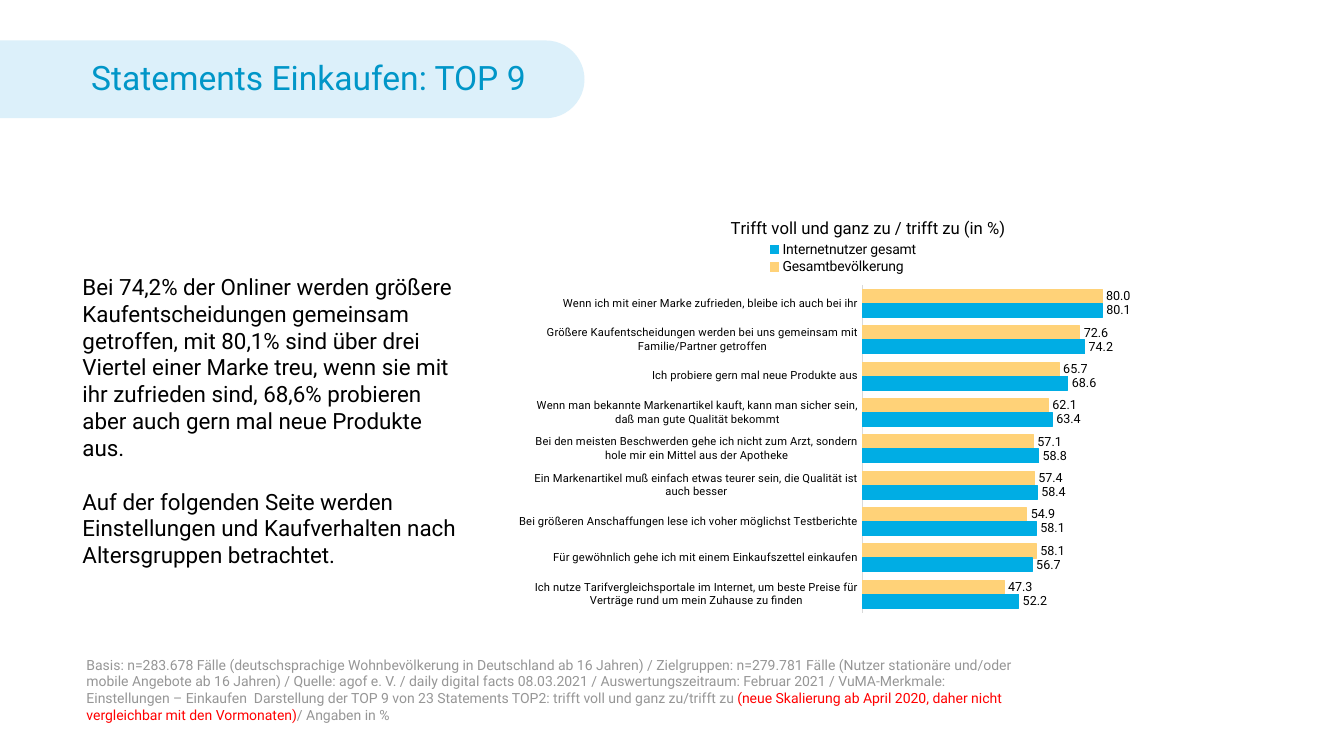
from lxml import etree
from pptx import Presentation
from pptx.chart.data import CategoryChartData
from pptx.dml.color import RGBColor
from pptx.enum.chart import XL_CHART_TYPE as ChartType
from pptx.enum.chart import XL_LABEL_POSITION as LabelPosition
from pptx.enum.chart import XL_LEGEND_POSITION as LegendPosition
from pptx.enum.chart import XL_TICK_MARK as TickMark
from pptx.enum.shapes import MSO_SHAPE as Shape
from pptx.enum.text import MSO_ANCHOR as Anchor
from pptx.enum.text import PP_ALIGN as Align
from pptx.oxml.ns import qn
from pptx.util import Cm, Pt

BLACK = RGBColor(0x00, 0x00, 0x00)
GREY = RGBColor(0x96, 0x96, 0x96)
RED = RGBColor(0xFF, 0x00, 0x00)
BLUE = RGBColor(0x00, 0x96, 0xC8)
PALE_BLUE = RGBColor(0xDC, 0xF0, 0xFA)
AXIS_GREY = RGBColor(0xD9, 0xD9, 0xD9)
YELLOW = RGBColor(0xFF, 0xD2, 0x78)
CYAN = RGBColor(0x00, 0xAD, 0xE4)

STATEMENTS = [
    # statement, Gesamtbevölkerung, Internetnutzer gesamt
    ("Wenn ich mit einer Marke zufrieden, bleibe ich auch bei ihr", 80.0, 80.1),
    ("Größere Kaufentscheidungen werden bei uns gemeinsam mit Familie/Partner getroffen", 72.6, 74.2),
    ("Ich probiere gern mal neue Produkte aus", 65.7, 68.6),
    ("Wenn man bekannte Markenartikel kauft, kann man sicher sein, daß man gute Qualität bekommt", 62.1, 63.4),
    ("Bei den meisten Beschwerden gehe ich nicht zum Arzt, sondern hole mir ein Mittel aus der Apotheke", 57.1, 58.8),
    ("Ein Markenartikel muß einfach etwas teurer sein, die Qualität ist auch besser", 57.4, 58.4),
    ("Bei größeren Anschaffungen lese ich voher möglichst Testberichte", 54.9, 58.1),
    ("Für gewöhnlich gehe ich mit einem Einkaufszettel einkaufen", 58.1, 56.7),
    ("Ich nutze Tarifvergleichsportale im Internet, um beste Preise für Verträge rund um mein Zuhause zu finden", 47.3, 52.2),
]


class PageBuilder:
    def __init__(self, page, font_name="Roboto"):
        self.page = page
        self.font_name = font_name

    def style(self, font, size, color):
        font.name = self.font_name
        font.size = Pt(size)
        font.bold = False
        font.color.rgb = color

    def heading(self, text, left, top, width, height):
        pill = self.page.shapes.add_shape(
            Shape.ROUNDED_RECTANGLE, Cm(left), Cm(top), Cm(width), Cm(height))
        pill.adjustments[0] = 0.5
        pill.shadow.inherit = False
        pill.fill.solid()
        pill.fill.fore_color.rgb = PALE_BLUE
        pill.line.fill.background()
        frame = pill.text_frame
        frame.text = text
        frame.vertical_anchor = Anchor.MIDDLE
        frame.margin_right = Cm(1.19)
        para = frame.paragraphs[0]
        para.alignment = Align.RIGHT
        para.line_spacing = 0.9
        self.style(para.runs[0].font, 24, BLUE)

    def text(self, paragraphs, left, top, width, height, size, anchor=Anchor.TOP, gap=0):
        """Each paragraph is a list of (text, colour) spans."""
        box = self.page.shapes.add_textbox(Cm(left), Cm(top), Cm(width), Cm(height))
        frame = box.text_frame
        frame.word_wrap = True
        frame.vertical_anchor = anchor
        for index, spans in enumerate(paragraphs):
            para = frame.add_paragraph() if index else frame.paragraphs[0]
            if index:
                para.space_before = Pt(gap)
            for words, color in spans:
                span = para.add_run()
                span.text = words
                self.style(span.font, size, color)

    def place(self, element, index, **fractions):
        """Give a chart part a fixed place, in fractions of the chart."""
        for old in element.findall(qn("c:layout")):
            element.remove(old)
        layout = etree.Element(qn("c:layout"))
        manual = etree.SubElement(layout, qn("c:manualLayout"))
        if element.tag == qn("c:plotArea"):
            etree.SubElement(manual, qn("c:layoutTarget")).set("val", "inner")
        for axis in ("x", "y"):
            etree.SubElement(manual, qn(f"c:{axis}Mode")).set("val", "edge")
        for name, value in fractions.items():
            etree.SubElement(manual, qn(f"c:{name}")).set("val", str(value))
        element.insert(index, layout)

    def bar_chart(self, title, rows, series_styles, left, top, width, height):
        data = CategoryChartData(number_format="#,##0.0")
        data.categories = [row[0] for row in rows]
        for column, (name, _) in enumerate(series_styles, start=1):
            data.add_series(name, [row[column] for row in rows])
        chart = self.page.shapes.add_chart(
            ChartType.BAR_CLUSTERED, Cm(left), Cm(top), Cm(width), Cm(height), data).chart
        self.style(chart.font, 8, BLACK)

        # Title and legend
        chart.has_title = True
        frame = chart.chart_title.text_frame
        frame.text = title
        self.style(frame.paragraphs[0].runs[0].font, 12, BLACK)
        self.place(chart.chart_title._element, 1, x=0.32, y=0.04)
        chart.has_legend = True
        chart.legend.position = LegendPosition.TOP
        chart.legend.include_in_layout = False
        self.style(chart.legend.font, 10, BLACK)
        self.place(chart.legend._element, 1, x=0.37, y=0.1, w=0.26, h=0.08)

        # Axes
        categories = chart.category_axis
        categories.reverse_order = True
        categories.major_tick_mark = TickMark.NONE
        categories.format.line.color.rgb = AXIS_GREY
        categories.format.line.width = Pt(0.75)
        self.style(categories.tick_labels.font, 8, BLACK)
        values = chart.value_axis
        values.minimum_scale = 0
        values.maximum_scale = 90
        values.has_major_gridlines = False
        values.visible = False

        # Bars
        plot = chart.plots[0]
        plot.gap_width = 60
        plot.overlap = 0
        plot.vary_by_categories = False
        self.place(chart._chartSpace.chart.plotArea, 0, x=0.53, y=0.2, w=0.42, h=0.73)
        for series, (_, color) in zip(plot.series, series_styles):
            series.format.fill.solid()
            series.format.fill.fore_color.rgb = color
            series.format.line.color.rgb = color
            series.format.line.width = Pt(0.75)
            labels = series.data_labels
            labels.show_value = True
            labels.position = LabelPosition.OUTSIDE_END
            labels.number_format = "#,##0.0"
            labels.number_format_is_linked = False
            self.style(labels.font, 9, BLACK)


def main():
    deck = Presentation()
    deck.slide_width, deck.slide_height = Cm(33.87), Cm(19.05)
    builder = PageBuilder(deck.slides.add_slide(deck.slide_layouts[6]))

    # Heading, running in from the left edge
    builder.heading("Statements Einkaufen: TOP 9", -15.57, 1.02, 30.3, 1.96)

    # Summary
    builder.text([
        [("Bei 74,2% der Onliner werden größere Kaufentscheidungen gemeinsam getroffen, "
          "mit 80,1% sind über drei Viertel einer Marke treu, wenn sie mit ihr zufrieden "
          "sind, 68,6% probieren aber auch gern mal neue Produkte aus.", BLACK)],
        [("Auf der folgenden Seite werden Einstellungen und Kaufverhalten nach "
          "Altersgruppen betrachtet.", BLACK)],
    ], 1.83, 4.95, 10, 11.3, size=16, anchor=Anchor.MIDDLE, gap=19)

    # Statements chart
    builder.bar_chart(
        "Trifft voll und ganz zu / trifft zu (in %)", STATEMENTS,
        [("Gesamtbevölkerung", YELLOW), ("Internetnutzer gesamt", CYAN)],
        13.08, 4.93, 16.26, 11.3)

    # Source note
    builder.text([[
        ("Basis: n=283.678 Fälle (deutschsprachige Wohnbevölkerung in Deutschland ab 16 Jahren) "
         "/ Zielgruppen: n=279.781 Fälle (Nutzer stationäre und/oder mobile Angebote ab 16 Jahren) "
         "/ Quelle: agof e. V. / daily digital facts 08.03.2021 / Auswertungszeitraum: Februar 2021 "
         "/ VuMA-Merkmale: Einstellungen – Einkaufen  Darstellung der TOP 9 von 23 Statements "
         "TOP2: trifft voll und ganz zu/trifft zu ", GREY),
        ("(neue Skalierung ab April 2020, daher nicht vergleichbar mit den Vormonaten)", RED),
        ("/ Angaben in %", GREY),
    ]], 1.93, 16.41, 23.93, 1.73, size=10)

    deck.save("out.pptx")


if __name__ == "__main__":
    main()
